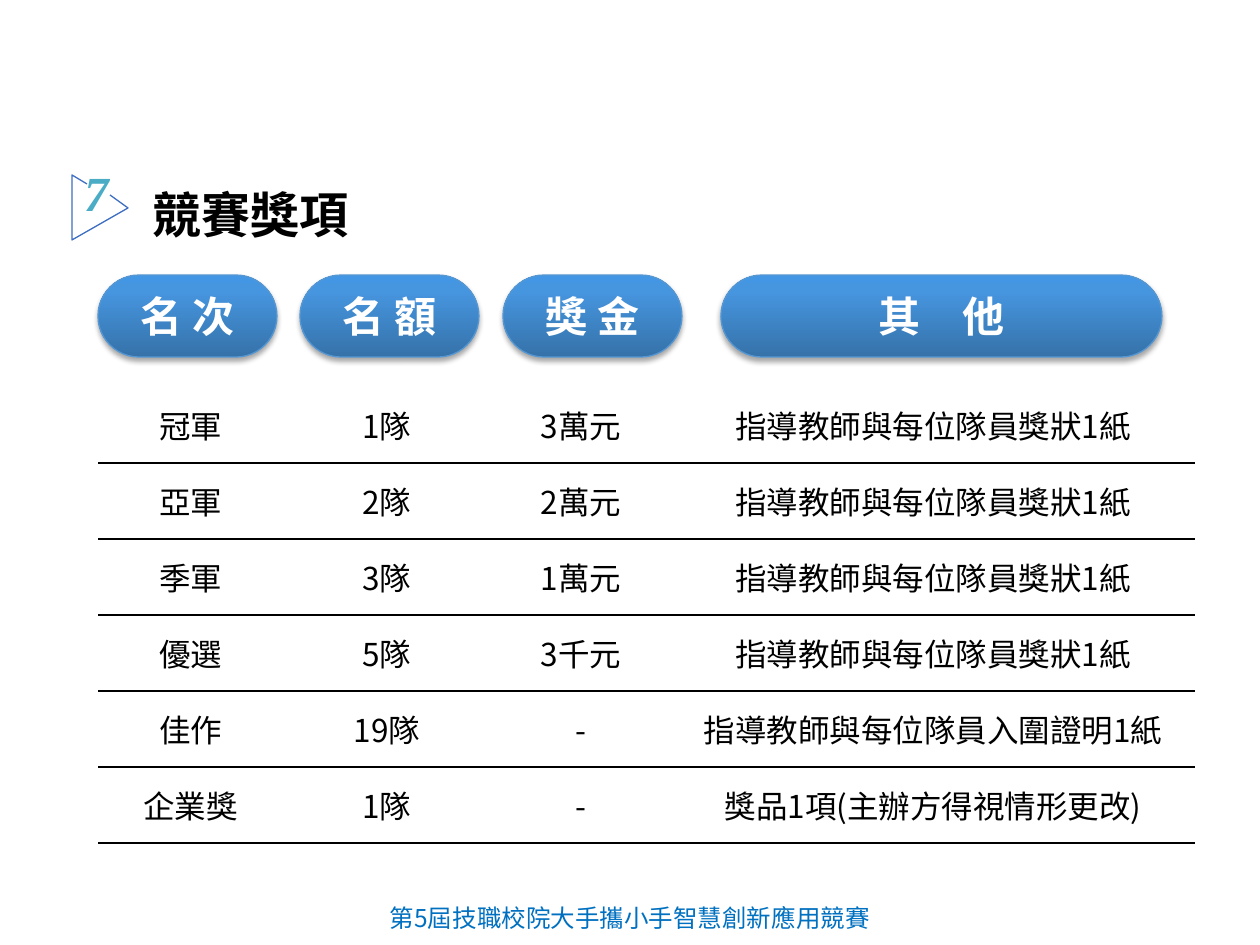
from lxml import etree
from pptx import Presentation
from pptx import util as u
from pptx.dml.color import RGBColor
from pptx.enum import shapes, text
from pptx.oxml import parse_xml
from pptx.oxml.ns import nsdecls, qn

PX = u.Inches(1) / 126

SANS = "Noto Sans CJK TC"
SERIF = "Times New Roman"
BLACK = RGBColor(0x00, 0x00, 0x00)
WHITE = RGBColor(0xFF, 0xFF, 0xFF)
FOOTER_BLUE = RGBColor(0x00, 0x70, 0xC0)
ARROW_BLUE = RGBColor(0x3E, 0x6E, 0xC2)
NUMBER_TEAL = RGBColor(0x4B, 0xAC, 0xC6)
PILL_EDGE = RGBColor(0x55, 0x97, 0xD3)
PILL_STOPS = [
    (0, RGBColor(0x35, 0x72, 0xA9)),
    (80, RGBColor(0x46, 0x95, 0xDF)),
    (100, RGBColor(0x43, 0x96, 0xE3)),
]

FOOTER = dict(size=u.Pt(14), name=SANS, color=FOOTER_BLUE)
NUMBER = dict(size=u.Pt(28), name=SERIF, color=NUMBER_TEAL, bold=True, italic=True)
TITLE = dict(size=u.Pt(28), name=SANS, color=BLACK, bold=True)
HEADING = dict(size=u.Pt(24), name=SANS, color=WHITE, bold=True)
BODY = dict(size=u.Pt(18), name=SANS, color=BLACK)

HEADINGS = [("名 次", 98, 179), ("名 額", 300, 179), ("獎 金", 503, 179), ("其　他", 721, 441)]
CERTIFICATE = "指導教師與每位隊員獎狀1紙"
AWARDS = [
    ("冠軍", "1隊", "3萬元", CERTIFICATE),
    ("亞軍", "2隊", "2萬元", CERTIFICATE),
    ("季軍", "3隊", "1萬元", CERTIFICATE),
    ("優選", "5隊", "3千元", CERTIFICATE),
    ("佳作", "19隊", "-", "指導教師與每位隊員入圍證明1紙"),
    ("企業獎", "1隊", "-", "獎品1項(主辦方得視情形更改)"),
]
COLUMN_WIDTHS = [185, 208, 180, 524]
ROW_HEIGHT = 76
NO_STYLE_NO_GRID = "{2D5ABB26-0587-4C30-8999-92F81FD0307C}"


def px(*lengths):
    return [u.Emu(round(length * PX)) for length in lengths]


def write(frame, words, style, align=text.PP_ALIGN.CENTER):
    """Put one styled paragraph in the frame and return it."""
    paragraph = frame.paragraphs[0]
    paragraph.alignment = align
    run = paragraph.add_run()
    run.text = words
    for key, value in style.items():
        if key == "color":
            run.font.color.rgb = value
        else:
            setattr(run.font, key, value)
    east_asian = etree.SubElement(run.font._element, qn("a:ea"))
    east_asian.set("typeface", style["name"])
    return paragraph


def set_margins(target, margin):
    for side in ("left", "top", "right", "bottom"):
        setattr(target, f"margin_{side}", margin)


def add_label(slide, box, words, style, margin=0, anchor=text.MSO_ANCHOR.MIDDLE, **options):
    frame = slide.shapes.add_textbox(*px(*box)).text_frame
    frame.word_wrap = True
    frame.vertical_anchor = anchor
    set_margins(frame, u.Inches(margin))
    return write(frame, words, style, **options)


def add_section_arrow(slide):
    """Open triangle whose gap leaves room for the section number."""
    builder = slide.shapes.build_freeform(87, 184, scale=PX)
    builder.add_line_segments([(72, 175), (72, 240), (128, 208), (110, 195)], close=False)
    arrow = builder.convert_to_shape()
    arrow.shadow.inherit = False
    arrow.fill.background()
    arrow.line.color.rgb = ARROW_BLUE
    arrow.line.width = u.Pt(0.75)


def add_heading_pill(slide, words, left, width):
    pill = slide.shapes.add_shape(
        shapes.MSO_SHAPE.ROUNDED_RECTANGLE, *px(left, 275, width, 82))
    pill.adjustments[0] = 0.5
    pill.line.color.rgb = PILL_EDGE
    pill.line.width = u.Pt(0.75)
    shade_pill(pill)
    pill.text_frame.vertical_anchor = text.MSO_ANCHOR.MIDDLE
    set_margins(pill.text_frame, u.Inches(0.05))
    write(pill.text_frame, words, HEADING)


def shade_pill(pill):
    """Three-stop vertical gradient and a soft shadow below."""
    pill.fill.gradient()
    pill.fill.gradient_angle = 90
    properties = pill._element.spPr
    stops = properties.find(".//" + qn("a:gsLst"))
    stops.clear()
    for percent, color in PILL_STOPS:
        stops.append(parse_xml(
            f'<a:gs {nsdecls("a")} pos="{percent * 1000}"><a:srgbClr val="{color}"/></a:gs>'))
    pill.shadow.inherit = False
    properties.find(qn("a:effectLst")).append(parse_xml(
        f'<a:outerShdw {nsdecls("a")} blurRad="{u.Pt(3)}" dist="{u.Pt(1.8)}" dir="5400000"'
        ' rotWithShape="0"><a:srgbClr val="000000"><a:alpha val="35000"/></a:srgbClr>'
        '</a:outerShdw>'))


def underline_cell(cell):
    cell._tc.get_or_add_tcPr().insert(0, parse_xml(
        f'<a:lnB {nsdecls("a")} w="{u.Pt(1)}"><a:solidFill><a:srgbClr val="{BLACK}"/>'
        '</a:solidFill></a:lnB>'))


def add_awards_table(slide):
    box = px(98, 387, sum(COLUMN_WIDTHS), ROW_HEIGHT * len(AWARDS))
    table = slide.shapes.add_table(len(AWARDS), len(COLUMN_WIDTHS), *box).table
    table.first_row = table.horz_banding = False
    table._tbl.tblPr.find(qn("a:tableStyleId")).text = NO_STYLE_NO_GRID
    for column, width in zip(table.columns, px(*COLUMN_WIDTHS)):
        column.width = width
    for row, award in zip(table.rows, AWARDS):
        row.height = px(ROW_HEIGHT)[0]
        for cell, words in zip(row.cells, award):
            cell.vertical_anchor = text.MSO_ANCHOR.MIDDLE
            set_margins(cell, 0)
            cell.fill.background()
            underline_cell(cell)
            write(cell.text_frame, words, BODY)


def main():
    presentation = Presentation()
    presentation.slide_width, presentation.slide_height = px(1260, 945)
    slide = presentation.slides.add_slide(presentation.slide_layouts[6])
    add_label(slide, (0, 897, 1260, 48), "第5屆技職校院大手攜小手智慧創新應用競賽", FOOTER,
              margin=0.05, anchor=text.MSO_ANCHOR.TOP)
    add_section_arrow(slide)
    add_label(slide, (72, 165, 49, 54), "7", NUMBER)
    title = add_label(slide, (153, 173, 1121, 70), "競賽獎項", TITLE, align=text.PP_ALIGN.LEFT)
    title.line_spacing = 1.2
    for words, left, width in HEADINGS:
        add_heading_pill(slide, words, left, width)
    add_awards_table(slide)
    presentation.save("out.pptx")


if __name__ == "__main__":
    main()
